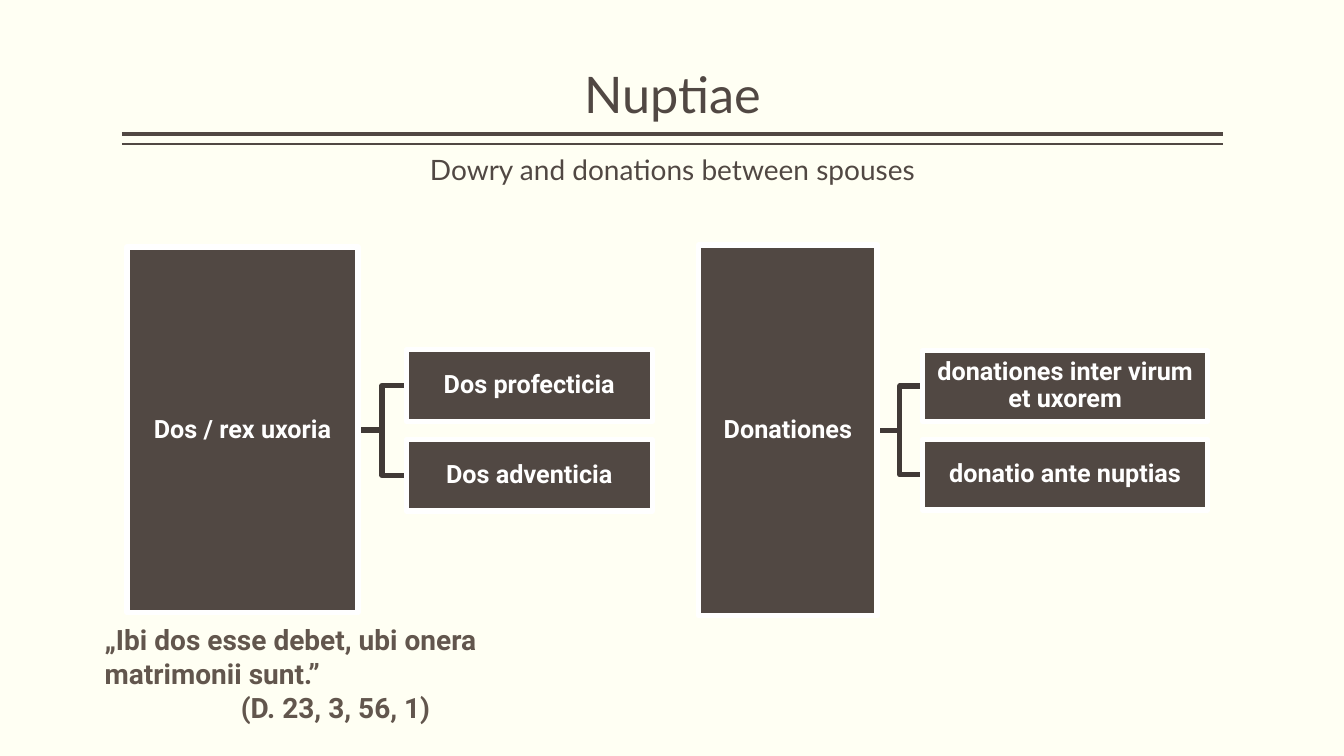
"""Build the slide on dowry and donations between spouses."""
import pptx
import pptx.dml.color
import pptx.enum.shapes
import pptx.enum.text
import pptx.util
from dataclasses import dataclass
from pptx.util import Inches

TITLE = "Nuptiae"
SUBTITLE = "Dowry and donations between spouses"
QUOTE = "„Ibi dos esse debet, ubi onera matrimonii sunt.”"
SOURCE = "(D. 23, 3, 56, 1)"
TREES = [
    {"root": "Dos / rex uxoria", "root_box": (1.26, 2.45, 2.29, 3.63),
     "leaves": ["Dos profecticia", "Dos adventicia"],
     "leaf_box": (4.03, 3.47, 2.44, 0.71), "pitch": 0.89},
    {"root": "Donationes", "root_box": (6.93, 2.43, 1.77, 3.68),
     "leaves": ["donationes inter virum et uxorem", "donatio ante nuptias"],
     "leaf_box": (9.15, 3.48, 2.83, 0.70), "pitch": 0.88},
]
RULES = [(1.33, 3), (1.43, 1)]
RULE_LEFT, RULE_RIGHT = 1.21, 12.13


@dataclass(frozen=True)
class Theme:
    """Colours, fonts and sizes."""
    paper: str = "FFFFF3"
    dark: str = "514843"
    branch: str = "413A36"
    quote: str = "62564D"
    white: str = "FFFFFF"
    heading: str = "Lato"
    body: str = "Roboto"
    title_pt: int = 36
    text_pt: int = 20
    box_pt: int = 18
    border_pt: float = 3.78


THEME = Theme()
ALIGN = pptx.enum.text.PP_ALIGN
ANCHOR = pptx.enum.text.MSO_ANCHOR


def rgb(color):
    """Turn a hex string into a colour."""
    return pptx.dml.color.RGBColor.from_string(color)


def set_line(sp, color, width):
    """Set the colour and width of an outline."""
    sp.line.color.rgb = rgb(color)
    sp.line.width = pptx.util.Pt(width)


def write(sp, *lines, font, size, color, bold=False, align=ALIGN.CENTER,
          anchor=ANCHOR.TOP, spacing=1.0, inset=(0.1, 0.05), indents=()):
    """Write formatted paragraphs into a shape."""
    tf = sp.text_frame
    tf.word_wrap = True
    tf.vertical_anchor = anchor
    tf.margin_left = tf.margin_right = Inches(inset[0])
    tf.margin_top = tf.margin_bottom = Inches(inset[1])
    for i, text in enumerate(lines):
        p = tf.paragraphs[0] if i == 0 else tf.add_paragraph()
        p.alignment = align
        p.line_spacing = spacing
        if i < len(indents):
            p._p.get_or_add_pPr().set("marL", str(Inches(indents[i])))
        r = p.add_run()
        r.text = text
        r.font.name = font
        r.font.size = pptx.util.Pt(size)
        r.font.bold = bold
        r.font.color.rgb = rgb(color)


def add_text(s, box, *lines, **fmt):
    """Add a text box."""
    write(s.shapes.add_textbox(*map(Inches, box)), *lines, **fmt)


def add_box(s, box, text):
    """Add a dark labelled rectangle with a white border."""
    sp = s.shapes.add_shape(pptx.enum.shapes.MSO_SHAPE.RECTANGLE, *map(Inches, box))
    sp.shadow.inherit = False
    sp.fill.solid()
    sp.fill.fore_color.rgb = rgb(THEME.dark)
    set_line(sp, THEME.white, THEME.border_pt)
    write(sp, text, font=THEME.body, size=THEME.box_pt, color=THEME.white,
          bold=True, anchor=ANCHOR.MIDDLE, spacing=0.9, inset=(0.01, 0.01))


def add_branch(s, x1, y1, x2, y2):
    """Add an elbow that turns halfway between its ends."""
    mid = (x1 + x2) / 2
    points = [(Inches(x), Inches(y)) for x, y in [(mid, y1), (mid, y2), (x2, y2)]]
    builder = s.shapes.build_freeform(Inches(x1), Inches(y1))
    builder.add_line_segments(points, close=False)
    sp = builder.convert_to_shape()
    sp.shadow.inherit = False
    sp.fill.background()
    set_line(sp, THEME.branch, THEME.border_pt)


def add_tree(s, tree):
    """Add a root box, its leaves and the branches between them."""
    left, top, width, height = tree["root_box"]
    x, y, w, h = tree["leaf_box"]
    tops = [y + i * tree["pitch"] for i in range(len(tree["leaves"]))]
    for leaf_top in tops:
        add_branch(s, left + width, top + height / 2, x, leaf_top + h / 2)
    add_box(s, tree["root_box"], tree["root"])
    for leaf_top, text in zip(tops, tree["leaves"]):
        add_box(s, (x, leaf_top, w, h), text)


def add_rule(s, y, width):
    """Add a horizontal rule under the title."""
    line = s.shapes.add_connector(
        pptx.enum.shapes.MSO_CONNECTOR.STRAIGHT,
        Inches(RULE_LEFT), Inches(y), Inches(RULE_RIGHT), Inches(y))
    set_line(line, THEME.dark, width)
    pptx.oxml.ns.qn("a:effectLst")
    line._element.spPr.append(pptx.oxml.parse_xml(
        '<a:effectLst xmlns:a="http://schemas.openxmlformats.org/drawingml/2006/main"/>'))


def main():
    """Compose and save the slide."""
    prs = pptx.Presentation()
    prs.slide_width, prs.slide_height = Inches(13.33), Inches(7.5)
    s = prs.slides.add_slide(prs.slide_layouts[6])
    s.background.fill.solid()
    s.background.fill.fore_color.rgb = rgb(THEME.paper)
    for y, width in RULES:
        add_rule(s, y, width)
    span = RULE_RIGHT - RULE_LEFT
    add_text(s, (RULE_LEFT, 0.08, span, 1.2), TITLE, font=THEME.heading,
             size=THEME.title_pt, color=THEME.dark, anchor=ANCHOR.BOTTOM,
             spacing=0.9, inset=(0, 0.05))
    add_text(s, (RULE_LEFT, 1.46, span, 0.44), SUBTITLE, font=THEME.heading,
             size=THEME.text_pt, color=THEME.dark)
    for tree in TREES:
        add_tree(s, tree)
    add_text(s, (0.94, 6.13, 3.96, 1.11), QUOTE, SOURCE, font=THEME.body,
             size=THEME.text_pt, color=THEME.quote, bold=True,
             align=ALIGN.LEFT, indents=(0, 1.35))
    prs.save("out.pptx")


if __name__ == "__main__":
    main()
